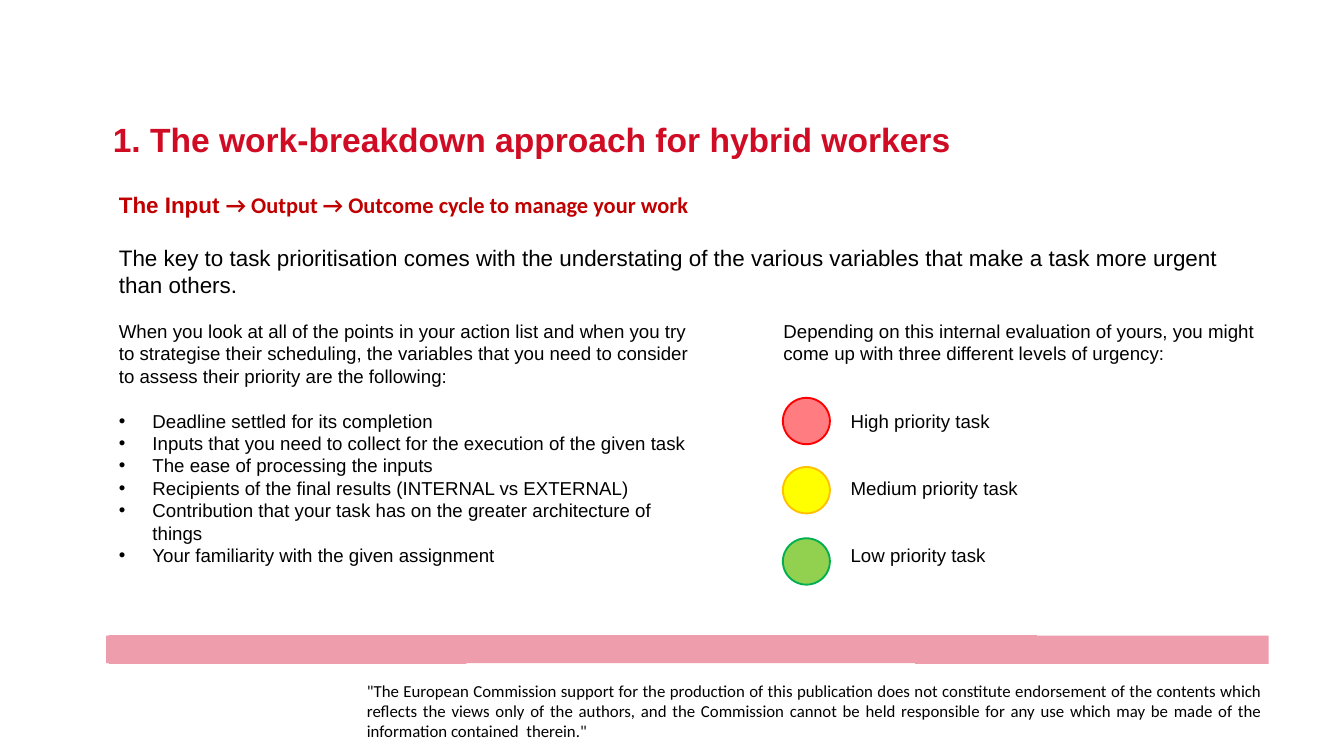
from dataclasses import dataclass
from typing import Any

from lxml.etree import SubElement
from pptx import Presentation
from pptx.dml.color import RGBColor
from pptx.enum.shapes import MSO_SHAPE
from pptx.enum.text import PP_ALIGN
from pptx.oxml.ns import qn
from pptx.util import Emu, Pt

PX = 9144
HUES = {
    "black": "000000", "title": "D00B24", "head": "C00000", "bar": "ED9DAB",
    "rose": "FF7C80", "red": "FF0000", "yellow": "FFFF00", "amber": "FFC000",
    "lime": "92D050", "green": "00B050",
}


@dataclass
class Para:
    text: str
    size: int = 20
    face: str = "Arial"
    hue: str = "black"
    bold: bool = False
    gap: int = 0
    left: int = 0
    bullet: bool = False


@dataclass
class Level:
    name: str
    top: int
    fill: str
    line: str


LEVELS = [
    Level("High", 592, "rose", "red"),
    Level("Medium", 695, "yellow", "amber"),
    Level("Low", 801, "lime", "green"),
]
FACTORS = [
    "Deadline settled for its completion",
    "Inputs that you need to collect for the execution of the given task",
    "The ease of processing the inputs",
    "Recipients of the final results (INTERNAL vs EXTERNAL)",
    "Contribution that your task has on the greater architecture of things",
    "Your familiarity with the given assignment",
]
EDGE = [
    (1888, 946), (1543, 946), (1543, 945), (162, 945), (162, 946), (158, 946),
    (158, 987), (162, 987), (162, 988), (694, 988), (694, 987), (1362, 987),
    (1362, 988), (1888, 988),
]


def color(name: str) -> RGBColor:
    return RGBColor.from_string(HUES[name])


def style(font: Any, item: Para) -> None:
    font.name, font.size, font.bold = item.face, Pt(item.size), item.bold
    font.color.rgb = color(item.hue)


def indent(para: Any, item: Para) -> None:
    props = para._p.get_or_add_pPr()
    props.set("marL", str(item.left * PX))
    if item.bullet:
        props.set("indent", str(-item.left * PX))
        tint = SubElement(props, qn("a:buClr"))
        SubElement(tint, qn("a:srgbClr"), val=HUES["black"])
        SubElement(props, qn("a:buFont"), typeface="Arial")
        SubElement(props, qn("a:buChar"), char="•")


def write(slide: Any, box: tuple[int, int, int, int], items: list[Para],
          pad: tuple[int, int] = (10, 5)) -> Any:
    frame = slide.shapes.add_textbox(*(Emu(n * PX) for n in box)).text_frame
    frame.word_wrap = True
    frame.margin_left = frame.margin_right = Emu(pad[0] * PX)
    frame.margin_top = frame.margin_bottom = Emu(pad[1] * PX)
    for spot, item in enumerate(items):
        para = frame.add_paragraph() if spot else frame.paragraphs[0]
        para.text = item.text
        if item.gap:
            para.space_before = Pt(item.gap)
        if item.left:
            indent(para, item)
        style(para.font, item)
    return frame


def draw_bar(slide: Any) -> None:
    path = slide.shapes.build_freeform(*EDGE[0], scale=PX)
    path.add_line_segments(EDGE[1:], close=True)
    bar = path.convert_to_shape()
    bar.shadow.inherit = False
    bar.fill.solid()
    bar.fill.fore_color.rgb = color("bar")
    bar.line.fill.background()


def draw_light(slide: Any, level: Level) -> None:
    light = slide.shapes.add_shape(
        MSO_SHAPE.OVAL, *(Emu(n * PX) for n in (1165, level.top, 70, 69)))
    light.shadow.inherit = False
    light.fill.solid()
    light.fill.fore_color.rgb = color(level.fill)
    light.line.color.rgb = color(level.line)
    light.line.width = Pt(2)


def main() -> None:
    deck = Presentation()
    deck.slide_width, deck.slide_height = Emu(2000 * PX), Emu(1125 * PX)
    slide = deck.slides.add_slide(deck.slide_layouts[6])
    draw_bar(slide)

    note = write(slide, (545, 1015, 1333, 76), [Para(
        '"The European Commission support for the production of this publication '
        "does not constitute endorsement of the contents which reflects the views "
        "only of the authors, and the Commission cannot be held responsible for any "
        'use which may be made of the information contained  therein."',
        18, "Calibri", left=1)], (0, 0)).paragraphs[0]
    note.alignment = PP_ALIGN.JUSTIFY
    note.line_spacing = 0.98

    write(slide, (158, 172, 1513, 71), [Para(
        "1. The work-breakdown approach for hybrid workers", 36, hue="title", bold=True)])

    intro = write(slide, (167, 280, 1711, 172), [
        Para("", 24, hue="head", bold=True),
        Para("The key to task prioritisation comes with the understating of the "
             "various variables that make a task more urgent than others.", 24, gap=28),
    ])
    for text, face in (("The Input ", "Arial"),
                       ("→ Output → Outcome cycle to manage your work", "Calibri")):
        run = intro.paragraphs[0].add_run()
        run.text = text
        style(run.font, Para(text, 24, face, "head", True))

    write(slide, (167, 471, 882, 380), [
        Para("When you look at all of the points in your action list and when you try "
             "to strategise their scheduling, the variables that you need to consider "
             "to assess their priority are the following:"),
        *(Para(text, gap=0 if spot else 24, left=50, bullet=True)
          for spot, text in enumerate(FACTORS)),
    ])
    write(slide, (1156, 471, 767, 380), [
        Para("Depending on this internal evaluation of yours, you might come up with "
             "three different levels of urgency:"),
        *(Para(f"{level.name} priority task", gap=48, left=100) for level in LEVELS),
    ])
    for level in reversed(LEVELS):
        draw_light(slide, level)
    deck.save("out.pptx")


if __name__ == "__main__":
    main()
